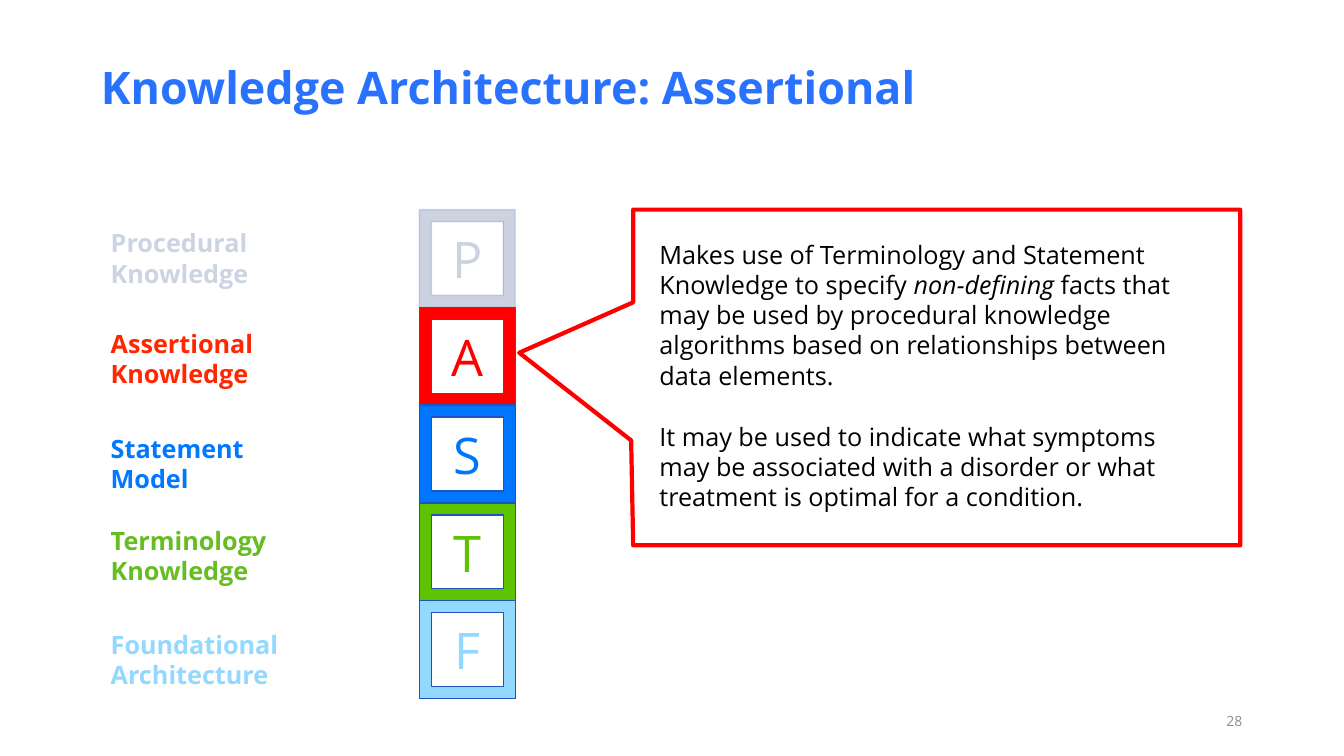
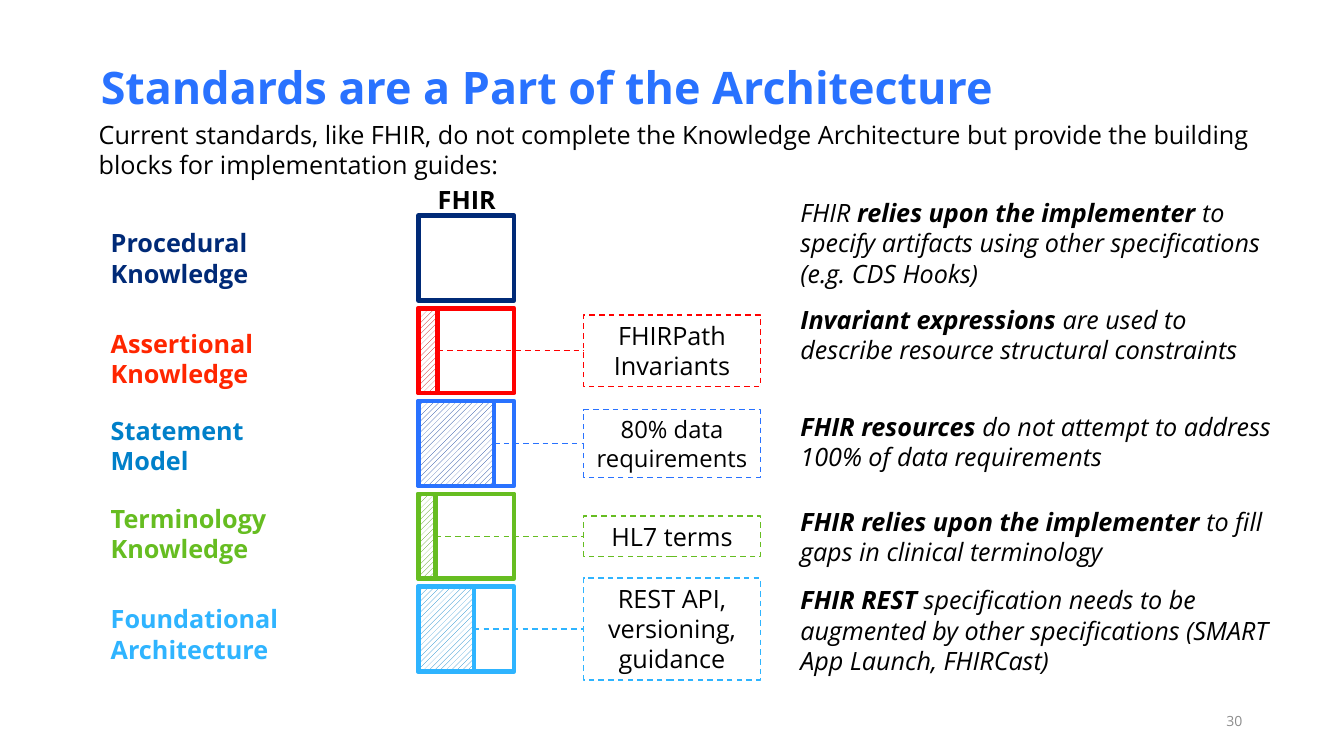
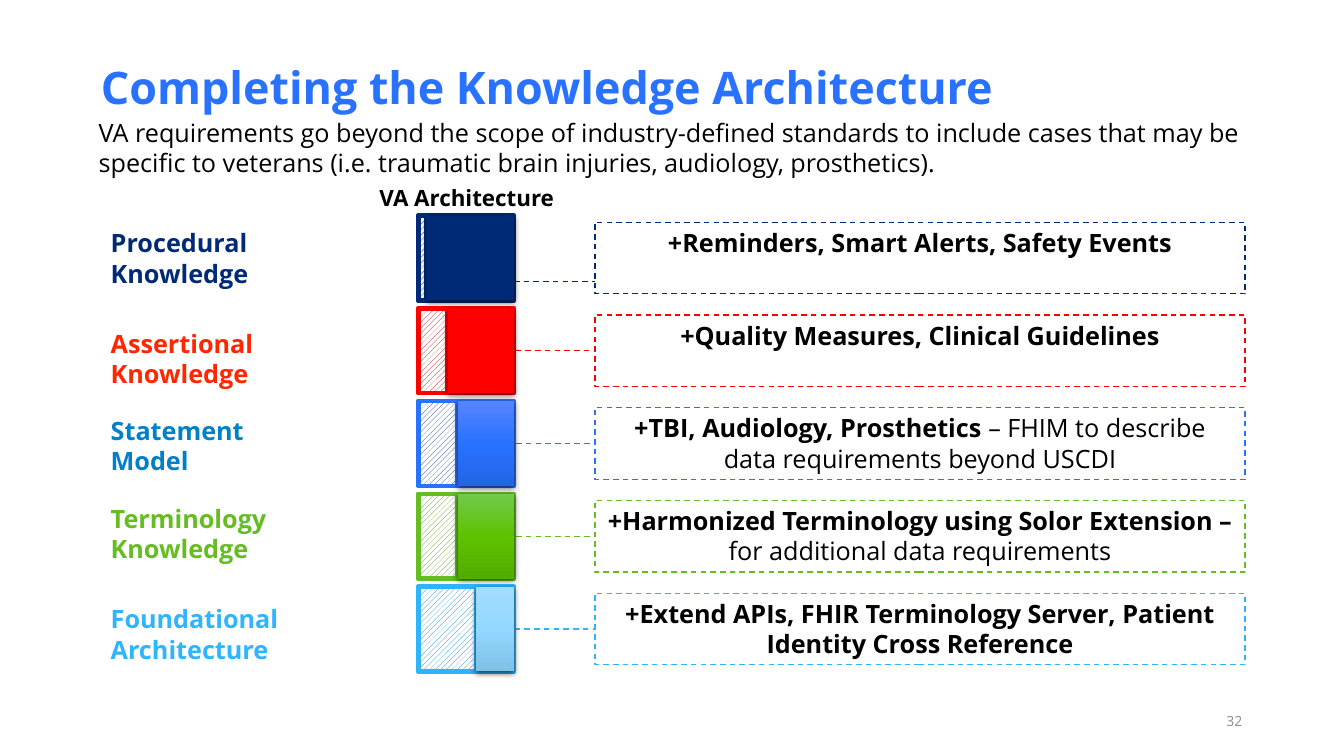
from copy import deepcopy
from dataclasses import dataclass
from itertools import cycle
from lxml import etree
from pptx import Presentation
from pptx import util as u
from pptx.dml.color import RGBColor
from pptx.enum import dml, shapes, text
from pptx.oxml.ns import qn

In, Pt = u.Inches, u.Pt
LEFT, MID, RIGHT = text.PP_ALIGN.LEFT, text.PP_ALIGN.CENTER, text.PP_ALIGN.RIGHT
RECT, FRAME = shapes.MSO_SHAPE.RECTANGLE, shapes.MSO_SHAPE.FRAME


@dataclass(frozen=True)
class Theme:
    font: str = "Open Sans"
    title: str = "2972FF"
    ink: str = "000000"
    page: str = "8C8C8C"
    white: str = "FFFFFF"
    edge: str = "1E54BD"
    red: str = "FF0000"
    names: tuple = ("002A77", "FF2600", "0080C9", "66BD21", "2FB4FF")
    lines: tuple = ("002A77", "FF0000", "2972FF", "66BD21", "2EB4FF")
    hatch: tuple = ("00153C", "C00000", "003294", "469200", "0080C9")
    solid: tuple = (("002A77",), ("FF0000",), ("5584FF", "2972FF", "2265E5"),
                    ("72CA4B", "5DC200", "53AC00"), ("A3DDFF", "93D8FF", "80C1E5"))
    tower: tuple = ("002060", "FF0000", "0076FF", "5DC200", "93D8FF")
    pale: tuple = ("002A77", "FF2600", "0078FF", "66BD21", "93D8FF")
    big: int = 32
    letter: int = 36
    body: int = 18
    snug: int = 17
    head: int = 16
    small: int = 10


LABELS = ("Procedural Knowledge", "Assertional Knowledge", "Statement\nModel",
          "Terminology Knowledge", "Foundational Architecture")
NEAR = (2.21, 3.21, 4.07, 4.94, 5.94)
BAR_X, BAR_W, BAR_H = 4.15, 0.95, 0.84


def bar_top(row):
    return 2.14 + 0.92 * row


def rgb(code):
    return RGBColor.from_string(code)


def fade(shape):
    for color in list(shape.element.iter(qn("a:srgbClr"))):
        etree.SubElement(color, qn("a:alpha"), val="20000")


class Deck:
    def __init__(self):
        self.show = Presentation()
        self.show.slide_width, self.show.slide_height = In(13.33), In(7.5)
        self.look = Theme()
        self.slide = None

    def page(self, title, num):
        self.slide = self.show.slides.add_slide(self.show.slide_layouts[6])
        head = self.text(1, 0.41, 10.48, 0.94, title, self.look.big, self.look.title,
                         ("b",), anchor=text.MSO_ANCHOR.MIDDLE, pads=(0, 0.05, 0.1, 0))
        head.text_frame.paragraphs[0].line_spacing = 0.8
        self.text(9.42, 6.95, 3, 0.4, str(num), self.look.small, self.look.page,
                  align=RIGHT, anchor=text.MSO_ANCHOR.MIDDLE)

    def letter(self, shape, words, size=None, color=None, marks=("",), align=LEFT,
               anchor=text.MSO_ANCHOR.TOP, pads=(0.1, 0.05, 0.1, 0.05), gap=0):
        frame = shape.text_frame
        frame.word_wrap, frame.vertical_anchor = True, anchor
        frame.margin_left, frame.margin_top, frame.margin_right, frame.margin_bottom = map(In, pads)
        frame.text = words
        for pos, para in enumerate(frame.paragraphs):
            first, *rest = para.text.split("|")
            para.text = first
            for part in rest:
                para.add_run().text = part
            para.alignment = align
            if pos and gap:
                para.space_before = Pt(gap)
            for run, mark in zip(para.runs, cycle(marks)):
                font = run.font
                font.name, font.size = self.look.font, Pt(size or self.look.body)
                font.bold, font.italic = "b" in mark, "i" in mark
                font.color.rgb = rgb(color or self.look.ink)

    def text(self, x, y, w, h, words, *args, **style):
        box = self.slide.shapes.add_textbox(In(x), In(y), In(w), In(h))
        self.letter(box, words, *args, **style)
        return box

    def rect(self, x, y, w, h, fill=None, line=None, width=1.0, dash=False, kind=RECT):
        shape = self.slide.shapes.add_shape(kind, In(x), In(y), In(w), In(h))
        self.paint(shape, fill, line, width)
        if dash:
            shape.line.dash_style = dml.MSO_LINE.DASH
        return shape

    def paint(self, shape, fill, line, width):
        shape.shadow.inherit = False
        if fill:
            shape.fill.solid()
            shape.fill.fore_color.rgb = rgb(fill)
        else:
            shape.fill.background()
        if line:
            shape.line.color.rgb, shape.line.width = rgb(line), Pt(width)
        else:
            shape.line.fill.background()

    def shade(self, shape):
        holder = shape.element.spPr.find(qn("a:effectLst"))
        glow = etree.SubElement(holder, qn("a:outerShdw"), blurRad=str(Pt(4.5)),
                                dist=str(Pt(1.5)), dir="5400000", rotWithShape="0")
        color = etree.SubElement(glow, qn("a:srgbClr"), val=self.look.ink)
        etree.SubElement(color, qn("a:alpha"), val="63000")

    def label(self, row, top, color):
        return self.text(1, top, 2.6, 0.71, LABELS[row], None, color, ("b",))

    def labels(self):
        for row, top in enumerate(NEAR):
            self.label(row, top, self.look.names[row])

    def lead(self, top, words, head, size):
        self.text(0.88, top, 12.12, 0.71, words)
        self.text(3.53, 1.78, 2.2, 0.4, head, size, None, ("b",), align=MID)

    def bar(self, row, part):
        color = self.look.lines[row]
        self.rect(BAR_X, bar_top(row), BAR_W, BAR_H, self.look.white, color, 3.25)
        if not part:
            return None
        shape = self.rect(BAR_X, bar_top(row), part, BAR_H, None, color, 3.25)
        shape.fill.patterned()
        shape.fill.pattern = dml.MSO_PATTERN.WIDE_UPWARD_DIAGONAL
        shape.fill.fore_color.rgb = rgb(self.look.hatch[row])
        shape.fill.back_color.rgb = rgb(self.look.white)
        return shape

    def solid(self, row, part):
        tones = self.look.solid[row]
        shape = self.rect(BAR_X + part, bar_top(row), BAR_W - part, BAR_H, tones[0])
        if len(tones) > 1:
            shape.fill.gradient()
            shape.fill.gradient_angle = 270
            stops = shape.element.spPr.find(".//" + qn("a:gsLst"))
            stops.insert(1, deepcopy(stops[0]))
            for stop, tone, at in zip(shape.fill.gradient_stops, tones, (0, 0.5, 1)):
                stop.color.rgb, stop.position = rgb(tone), at
        self.shade(shape)

    def box(self, row, x, w, h, words, size=None, marks=("",)):
        top = bar_top(row) + (BAR_H - h) / 2
        shape = self.rect(x, top, w, h, None, self.look.lines[row], 1, True)
        self.letter(shape, words, size, marks=marks, align=MID)
        return shape

    def link(self, row, start, end):
        line = self.slide.shapes.add_connector(shapes.MSO_CONNECTOR.STRAIGHT, 0, 0, 0, 0)
        if row:
            line.begin_connect(start, 3)
            line.end_connect(end, 1)
        else:
            line.begin_x, line.end_x = start.left + start.width, end.left
            line.begin_y = line.end_y = In(2.79)
        line.line.color.rgb, line.line.width = rgb(self.look.lines[row]), Pt(1)
        line.line.dash_style = dml.MSO_LINE.DASH
        etree.SubElement(line.element.spPr, qn("a:effectLst"))

    def callout(self, points):
        spots = [(In(x), In(y)) for x, y in points]
        pen = self.slide.shapes.build_freeform(*spots[0])
        pen.add_line_segments(spots[1:], close=True)
        self.paint(pen.convert_to_shape(), None, self.look.red, 3)


def layers(deck):
    deck.page("Knowledge Architecture: Assertional", 28)
    deck.callout([(6.28, 2.08), (12.3, 2.08), (12.3, 5.41), (6.28, 5.41),
                  (6.26, 4.37), (5.15, 3.5), (6.28, 3)])
    for row, top in enumerate((2.21, 3.21, 4.25, 5.16, 6.19)):
        name = deck.label(row, top, deck.look.pale[row])
        tone = deck.look.tower[row]
        cell = deck.rect(4.16, 2.08 + 0.97 * row, 0.95, 0.97, tone, deck.look.edge, kind=FRAME)
        deck.letter(cell, "PASTF"[row], deck.look.letter, tone, align=MID,
                    anchor=text.MSO_ANCHOR.MIDDLE)
        if row == 0:
            fade(name)
            fade(cell)
    deck.text(6.24, 2.27, 6.02, 2.93,
              "Makes use of Terminology and Statement Knowledge to specify |non-defining |"
              "facts that may be used by procedural knowledge algorithms based on "
              "relationships between data elements.\n"
              "It may be used to indicate what symptoms may be associated with a disorder "
              "or what treatment is optimal for a condition.",
              marks=("", "i", ""), pads=(0.3, 0.1, 0.3, 0.1), gap=22)


def standards(deck):
    deck.page("Standards are a Part of the Architecture", 30)
    deck.labels()
    deck.lead(1.13, "Current standards, like FHIR, do not complete the Knowledge Architecture "
              "but provide the building blocks for implementation guides:", "FHIR",
              deck.look.body)
    parts = (0, 0.19, 0.75, 0.17, 0.55)
    tags = (None, ("FHIRPath\nInvariants", 0.71, None),
            ("80% data\nrequirements", 0.67, deck.look.snug),
            ("HL7 terms", 0.4, None), ("REST API, versioning,\nguidance", 1.01, None))
    for row, (part, tag) in enumerate(zip(parts, tags)):
        hatch = deck.bar(row, part)
        if tag:
            words, high, size = tag
            deck.link(row, hatch, deck.box(row, 5.79, 1.75, high, words, size))
    notes = (
        (1.91, 1.01, "FHIR |relies upon the implementer |to specify artifacts using other "
         "specifications\n(e.g. CDS Hooks)", ("i", "bi", "i")),
        (2.97, 0.71, "Invariant expressions |are used to describe resource structural "
         "constraints", ("bi", "i")),
        (4.03, 0.71, "FHIR resources |do not attempt to address 100% of data requirements",
         ("bi", "i")),
        (4.97, 0.71, "FHIR relies upon the implementer |to fill gaps in clinical terminology",
         ("bi", "i")),
        (5.75, 1.01, "FHIR REST |specification needs to be augmented by other specifications "
         "(SMART App Launch, FHIRCast)", ("bi", "i")))
    for top, high, words, marks in notes:
        deck.text(7.84, top, 4.91, high, words, marks=marks)


def complete(deck):
    deck.page("Completing the Knowledge Architecture", 32)
    deck.labels()
    deck.lead(1.11, "VA requirements go beyond the scope of industry-defined standards to include "
              "cases that may be specific to veterans (i.e. traumatic brain injuries, audiology, "
              "prosthetics).", "VA Architecture", deck.look.head)
    parts = (0.08, 0.29, 0.39, 0.39, 0.57)
    gains = ("+Reminders, Smart Alerts, Safety Events",
             "+Quality Measures, Clinical Guidelines",
             "+TBI, Audiology, Prosthetics |– FHIM to describe data requirements beyond USCDI",
             "+Harmonized Terminology using Solor Extension – |for additional data requirements",
             "+Extend APIs, FHIR Terminology Server, Patient Identity Cross Reference")
    for row, (part, gain) in enumerate(zip(parts, gains)):
        hatch = deck.bar(row, part)
        deck.link(row, hatch, deck.box(row, 5.9, 6.45, 0.71, gain, marks=("b", "")))
        deck.solid(row, part)


def main():
    deck = Deck()
    layers(deck)
    standards(deck)
    complete(deck)
    deck.show.save("out.pptx")


if __name__ == "__main__":
    main()
